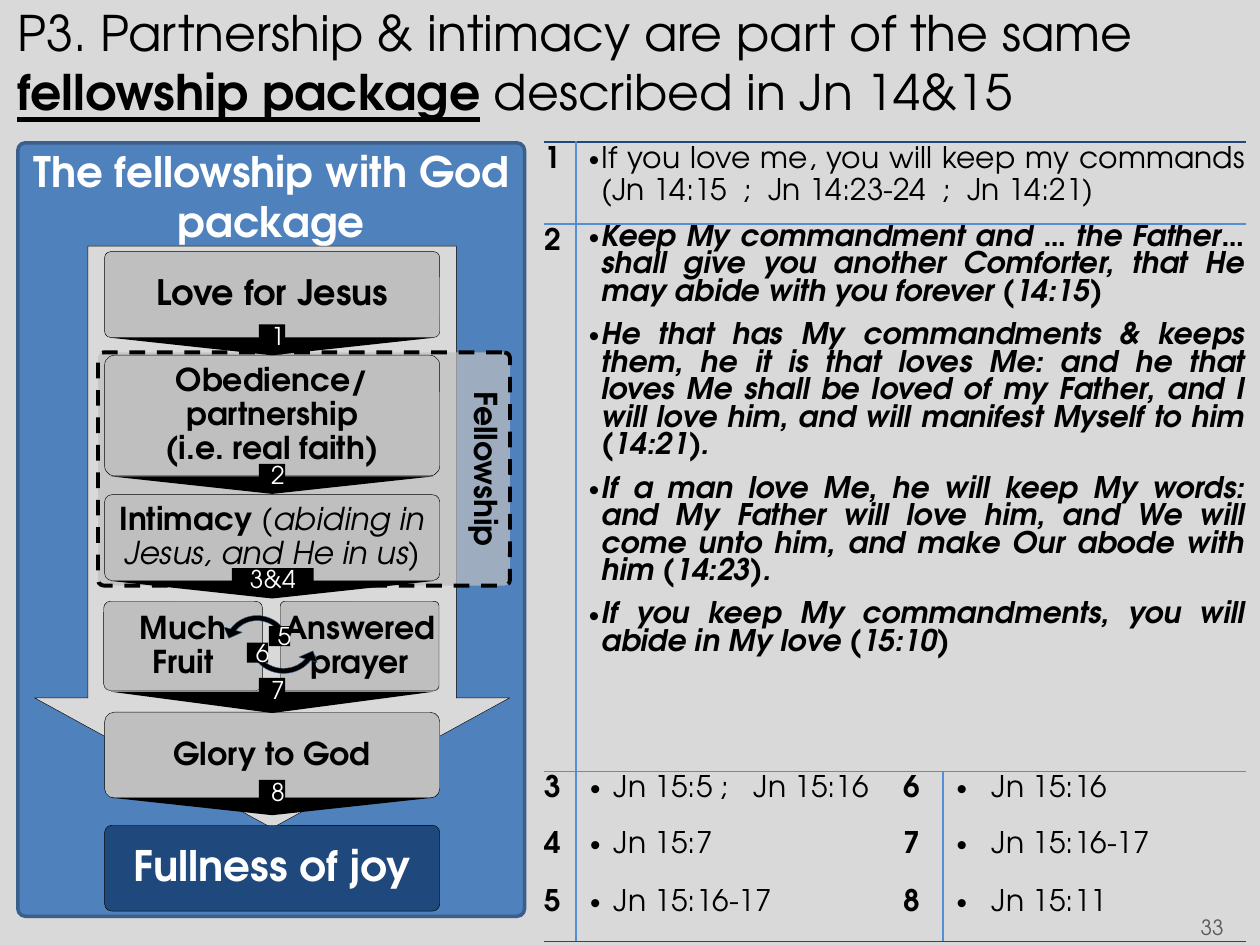
from lxml.etree import SubElement
from pptx import Presentation
from pptx.dml.color import RGBColor
from pptx.enum.dml import MSO_LINE
from pptx.enum.shapes import MSO_SHAPE
from pptx.enum.text import MSO_ANCHOR, MSO_AUTO_SIZE, PP_ALIGN
from pptx.oxml.ns import qn
from pptx.util import Pt

FONT = "TeX Gyre Adventor"
COLORS = {
    "page": "D9D9D9", "black": "000000", "white": "FFFFFF", "gray": "595959",
    "panel": "4F81BD", "panel_edge": "3A5F8C", "card": "BFBFBF",
    "navy": "1F497D", "rule": "558ED5",
}

# Content: a span is (text, styles), with b, i and u for bold, italic, underline
TITLE = [("P3. Partnership & intimacy are part of the same ", ""),
         ("fellowship package", "bu"), (" described in Jn 14&15", "")]
PAGE_NUMBER = "33"
PANEL_HEADING = [("The fellowship with God package", "b")]
CARD_LEFT, CARD_WIDTH = 59.8, 191.5
HALF_WIDTH, RIGHT_HALF_LEFT = 90.7, 160.2
# spans, left, top, width, height, corner, fill, text colour, size, side inset
CARDS = [
    ([("Love for Jesus", "b")],
     CARD_LEFT, 143.8, CARD_WIDTH, 49, 0.069, "card", "black", 20, 7.2),
    ([("Obedience/ partnership\n(i.e. real faith)", "b")],
     CARD_LEFT, 203, CARD_WIDTH, 69, 0.083, "card", "black", 18, 2.9),
    ([("Intimacy ", "b"), ("(abiding in Jesus, and He in us)", "i")],
     CARD_LEFT, 282.7, CARD_WIDTH, 49, 0.083, "card", "black", 18, 7.2),
    ([("Much Fruit", "b")],
     59.3, 343.6, HALF_WIDTH, 51, 0.075, "card", "black", 18, 7.2),
    ([("Answered\nprayer", "b")],
     RIGHT_HALF_LEFT, 343.6, HALF_WIDTH, 51, 0.052, "card", "black", 18, 0),
    ([("Glory to God", "b")],
     CARD_LEFT, 407, CARD_WIDTH, 49, 0.111, "card", "black", 18, 7.2),
    ([("Fullness of joy", "b")],
     CARD_LEFT, 471.6, CARD_WIDTH, 49, 0.083, "navy", "white", 24, 7.2),
]
WEDGES = [(193, 10), (272.2, 10), (332, 10), (395.3, 12.2), (455.8, 10)]  # top, height
# label, left, top, width, height
BADGES = [
    ("1", 147.9, 185.3, 15.1, 13), ("2", 147.9, 265, 15.1, 13),
    ("3&4", 132.5, 324.7, 46.8, 12.2), ("7", 147.9, 387.4, 15.1, 13),
    ("8", 147.9, 445.7, 15.1, 13), ("5", 153.6, 357.8, 12.2, 11.5),
    ("6", 141.1, 367.2, 12.2, 11.5),
]
CYCLE_ARROWS = [("flipH", 124.6, 347.8, 44.6, 43.2), ("flipV", 139, 345.6, 46, 43.2)]

COLUMN_WIDTHS = [18.7, 186.5, 23, 173.5]
ROW_HEIGHTS = [36.7, 304.6, 31.7, 33.1, 32.4]
WIDE_ROWS = [
    ("1", "", 1.15, 0, ["If you love me, you will keep my commands "
                        "(Jn 14:15  ;  Jn 14:23-24  ;  Jn 14:21)"]),
    ("2", "bi", 1.0, 9, [
        "Keep My commandment and … the Father… shall give you another Comforter, "
        "that He may abide with you forever (14:15)",
        "He that has My commandments & keeps them, he it is that loves Me: and he that "
        "loves Me shall be loved of my Father, and I will love him, and will manifest "
        "Myself to him (14:21).",
        "If a man love Me, he will keep My words: and My Father will love him, and We "
        "will come unto him, and make Our abode with him (14:23).",
        "If you keep My commandments, you will abide in My love (15:10)"]),
]
SPLIT_ROWS = [
    ("3", "Jn 15:5 ;   Jn 15:16", "6", "Jn 15:16"),
    ("4", "Jn 15:7", "7", "Jn 15:16-17"),
    ("5", "Jn 15:16-17", "8", "Jn 15:11"),
]


def rgb(name):
    return RGBColor.from_string(COLORS[name])


def write(paragraph, spans, size, color="black", align=PP_ALIGN.LEFT, spacing=None):
    paragraph.alignment = align
    if spacing:
        paragraph.line_spacing = spacing
    font = paragraph.font
    font.name, font.size = FONT, Pt(size)
    font.color.rgb = rgb(color)
    for text, styles in spans:
        for number, line in enumerate(text.split("\n")):
            if number:
                paragraph.add_line_break()
            span = paragraph.add_run()
            span.text = line
            span.font.bold = "b" in styles
            span.font.italic = "i" in styles
            span.font.underline = "u" in styles


def set_margins(frame, side, top=3.6):
    frame.margin_left = frame.margin_right = Pt(side)
    frame.margin_top, frame.margin_bottom = Pt(top), Pt(3.6)


def add_box(kind, left, top, width, height, fill, edge=None, weight=0.25, adjust=()):
    box = page.shapes.add_shape(kind, Pt(left), Pt(top), Pt(width), Pt(height))
    box.shadow.inherit = False
    box.fill.solid()
    box.fill.fore_color.rgb = rgb(fill)
    if edge:
        box.line.color.rgb = rgb(edge)
        box.line.width = Pt(weight)
    else:
        box.line.fill.background()
    for index, value in enumerate(adjust):
        box.adjustments[index] = value
    return box


def label(box, spans, size, color, side=7.2, top=3.6, anchor=MSO_ANCHOR.MIDDLE, spacing=None):
    frame = box.text_frame
    frame.word_wrap = True
    frame.vertical_anchor = anchor
    set_margins(frame, side, top)
    write(frame.paragraphs[0], spans, size, color, PP_ALIGN.CENTER, spacing)


def add_bullet(paragraph, margin, hang):
    properties = paragraph._p.get_or_add_pPr()
    properties.set("marL", str(Pt(margin)))
    properties.set("indent", str(-Pt(hang)))
    SubElement(properties, qn("a:buFont"), typeface="Arial")
    SubElement(properties, qn("a:buChar"), char="•")


def fill_cell(cell, texts, styles, spacing=1.15, after=0, bullet=None):
    cell.margin_left = cell.margin_right = Pt(0.7)
    cell.margin_top = cell.margin_bottom = Pt(0)
    frame = cell.text_frame
    for index, text in enumerate(texts):
        paragraph = frame.add_paragraph() if index else frame.paragraphs[0]
        if bullet:
            add_bullet(paragraph, *bullet)
        paragraph.space_after = Pt(after)
        align = PP_ALIGN.JUSTIFY if bullet else PP_ALIGN.LEFT
        write(paragraph, [(text, styles)], 17, align=align, spacing=spacing)


def set_borders(cell, **sides):
    properties = cell._tc.get_or_add_tcPr()
    for side in "LRTB":
        line = SubElement(properties, qn("a:ln" + side), w=str(Pt(1)))
        if sides.get(side):
            solid = SubElement(line, qn("a:solidFill"))
            SubElement(solid, qn("a:srgbClr"), val=COLORS[sides[side]])
        else:
            SubElement(line, qn("a:noFill"))


deck = Presentation()
deck.slide_width, deck.slide_height = Pt(720), Pt(540)
page = deck.slides.add_slide(deck.slide_layouts[5])
page.background.fill.solid()
page.background.fill.fore_color.rgb = rgb("page")

# Title and page number
title = page.shapes.title
title.left, title.top, title.width, title.height = Pt(2.6), Pt(-2.2), Pt(717), Pt(51)
title.text_frame.auto_size = MSO_AUTO_SIZE.NONE
title.text_frame.vertical_anchor = MSO_ANCHOR.TOP
write(title.text_frame.paragraphs[0], TITLE, 28)

number_box = page.shapes.add_textbox(Pt(538.6), Pt(515.5), Pt(167.8), Pt(28.8))
number_box.text_frame.word_wrap = True
number_box.text_frame.vertical_anchor = MSO_ANCHOR.MIDDLE
write(number_box.text_frame.paragraphs[0], [(PAGE_NUMBER, "")], 12, "gray", PP_ALIGN.RIGHT)

# Panel with its large arrow and the dashed fellowship frame
panel = add_box(MSO_SHAPE.ROUNDED_RECTANGLE, 10.2, 81.6, 289.6, 442, "panel",
                "panel_edge", 2, [0.015])
label(panel, PANEL_HEADING, 24, "white", top=0, anchor=MSO_ANCHOR.TOP)
add_box(MSO_SHAPE.DOWN_ARROW, 19.8, 140.6, 271.4, 332.6, "page", "black",
        adjust=[0.776, 0.274])
fellowship = add_box(MSO_SHAPE.ROUNDED_RECTANGLE, 107.1, 150.3, 133.2, 235.4, "card",
                     "black", 2.25, [0.024])
fellowship.rotation = 90
fellowship.line.dash_style = MSO_LINE.DASH
fill_color = fellowship.fill._xPr.find(qn("a:solidFill"))[0]
SubElement(fill_color, qn("a:alpha"), val="70000")
label(fellowship, [("Fellowship", "b")], 18, "black", anchor=MSO_ANCHOR.TOP, spacing=0.9)

# Steps, cycle arrows, wedges and numbered badges
for spans, left, top, width, height, corner, fill, color, size, side in CARDS:
    card = add_box(MSO_SHAPE.ROUNDED_RECTANGLE, left, top, width, height, fill,
                   "black", adjust=[corner])
    label(card, spans, size, color, side, spacing=0.9)
for flip, *place in CYCLE_ARROWS:
    arrow = add_box(MSO_SHAPE.CIRCULAR_ARROW, *place, "black", "panel_edge",
                    adjust=[0.067, 11.423, 195.009, 118.169, 0.125])
    arrow._element.spPr.find(qn("a:xfrm")).set(flip, "1")
for top, height in WEDGES:
    add_box(MSO_SHAPE.DOWN_ARROW, 63.4, top, 184.3, height, "black", adjust=[1, 1])
for text, *place in BADGES:
    label(add_box(MSO_SHAPE.RECTANGLE, *place, "black"), [(text, "")], 14, "white")

# Verse table
table = page.shapes.add_table(5, 4, Pt(310.6), Pt(81.2), Pt(sum(COLUMN_WIDTHS)),
                              Pt(sum(ROW_HEIGHTS))).table
table.first_row = table.horz_banding = False
table._tbl.tblPr.find(qn("a:tableStyleId")).text = "{2D5ABB26-0587-4C30-8999-92F81FD0307C}"
for column, width in zip(table.columns, COLUMN_WIDTHS):
    column.width = Pt(width)
for row, height in zip(table.rows, ROW_HEIGHTS):
    row.height = Pt(height)
for index, (number, styles, spacing, after, verses) in enumerate(WIDE_ROWS):
    table.cell(index, 1).merge(table.cell(index, 3))
    fill_cell(table.cell(index, 0), [number], "b")
    fill_cell(table.cell(index, 1), verses, styles, spacing, after, (13.7, 7.2))
for index, (number, verse, second_number, second_verse) in enumerate(SPLIT_ROWS, 2):
    fill_cell(table.cell(index, 0), [number], "b")
    fill_cell(table.cell(index, 1), [verse], "", bullet=(20.9, 13.7))
    fill_cell(table.cell(index, 2), [second_number], "b")
    fill_cell(table.cell(index, 3), [second_verse], "", bullet=(27.4, 20.2))
for row in range(5):
    top = "navy" if row == 0 else "rule" if row < 3 else None
    bottom = "navy" if row == 4 else "rule" if row < 2 else None
    for column in range(4):
        divided = row > 1 or column < 2
        set_borders(table.cell(row, column), T=top, B=bottom,
                    L="rule" if column % 2 and divided else None,
                    R="rule" if column % 2 == 0 and divided else None)

deck.save("out.pptx")
